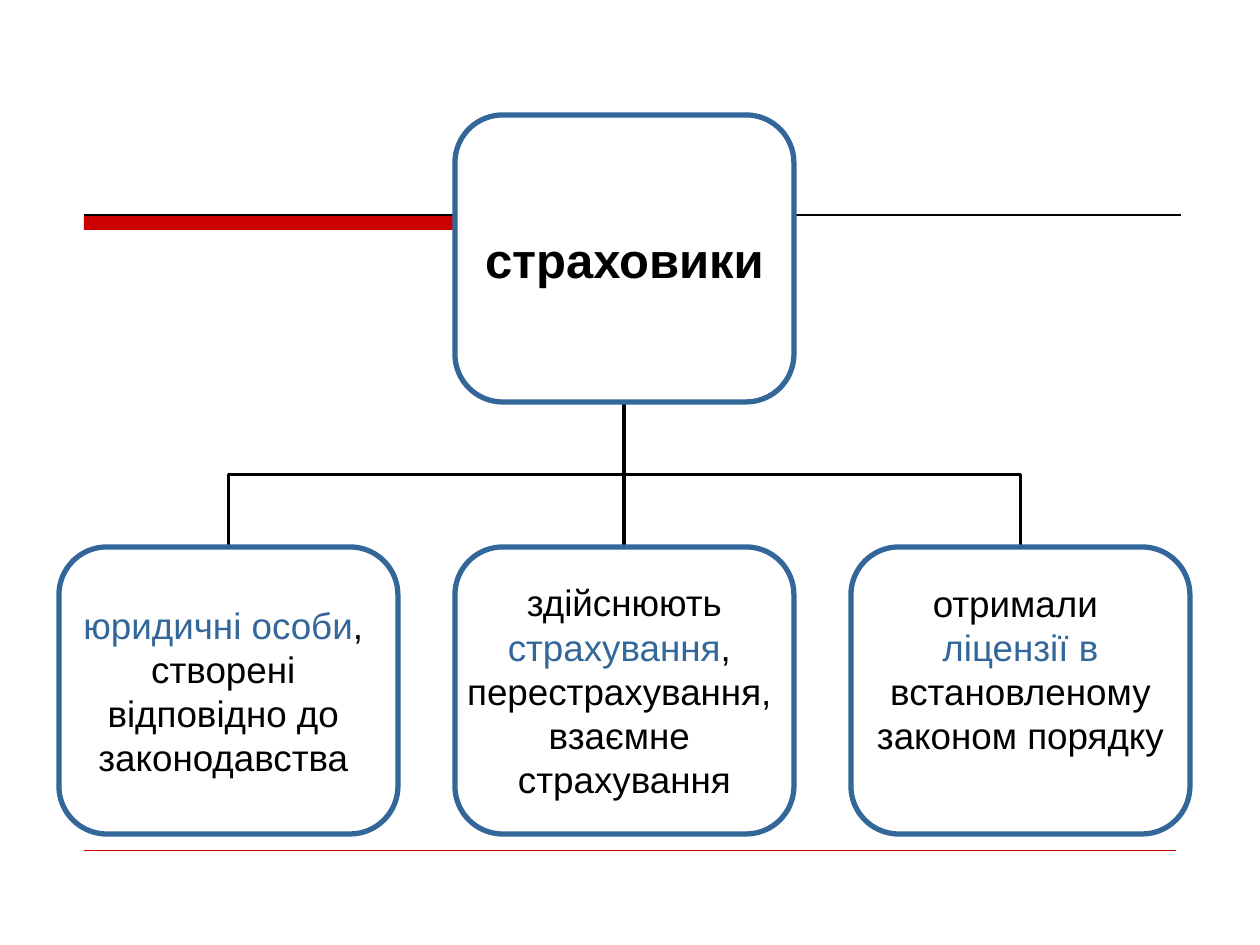
from lxml import etree
from pptx import Presentation, util as u
from pptx.dml.color import RGBColor
from pptx.enum import shapes, text
from pptx.oxml.ns import qn

BLACK, WHITE, BLUE, RED = "000000", "FFFFFF", "336699", "CC0000"
BOX_WIDTH, BOX_HEIGHT, BOX_STEP = 339, 287, 396
LINE_HEIGHT = 44

PARENT = [[("страховики", BLACK)]]
CHILDREN = [
    [
        [("юридичні особи", BLUE), (", ", BLACK)],
        [("створені ", BLACK)],
        [("відповідно до ", BLACK)],
        [("законодавства ", BLACK)],
    ],
    [
        [("здійснюють", BLACK)],
        [("страхування", BLUE), (", ", BLACK)],
        [("перестрахування, ", BLACK)],
        [("взаємне ", BLACK)],
        [("страхування", BLACK)],
    ],
    [
        [("отримали ", BLACK)],
        [("ліцензії в", BLUE)],
        [(" встановленому ", BLACK)],
        [("законом порядку", BLACK)],
    ],
]


def px(length):
    return u.Emu(round(length * 914400 / 126))


def color(value):
    return RGBColor.from_string(value)


def add_line(page, kind, start, end, value, width):
    line = page.shapes.add_connector(kind, *map(px, (*start, *end)))
    line.line.color.rgb = color(value)
    line.line.width = u.Pt(width)
    etree.SubElement(line.element.spPr, qn("a:effectLst"))
    return line


def add_rules(page, left, top, width, height):
    bar = page.shapes.add_shape(
        shapes.MSO_SHAPE.RECTANGLE, px(left), px(top), px(641), px(15))
    bar.shadow.inherit = False
    bar.fill.solid()
    bar.fill.fore_color.rgb = color(RED)
    bar.line.fill.background()
    straight = shapes.MSO_CONNECTOR.STRAIGHT
    add_line(page, straight, (left, top), (left + width, top), BLACK, 0.75)
    bottom = top + height
    add_line(page, straight, (left, bottom), (left + width - 5, bottom), RED, 0.25)


def add_branch(page, child, parent):
    middle_x = (child[0] + parent[0]) / 2
    middle_y = (child[1] + parent[1]) / 2
    half_rise = (child[1] - parent[1]) / 2
    half_run = (child[0] - parent[0]) / 2
    branch = add_line(
        page, shapes.MSO_CONNECTOR.ELBOW,
        (middle_x - half_rise, middle_y + half_run),
        (middle_x + half_rise, middle_y - half_run), BLACK, 2.25)
    branch.element.spPr.find(qn("a:xfrm")).set("rot", str(270 * 60000))


def add_box(page, left, top, lines, size, bold=False, bottom_inset=0):
    box = page.shapes.add_shape(
        shapes.MSO_SHAPE.ROUNDED_RECTANGLE,
        px(left), px(top), px(BOX_WIDTH), px(BOX_HEIGHT))
    box.shadow.inherit = False
    box.fill.solid()
    box.fill.fore_color.rgb = color(WHITE)
    box.line.color.rgb = color(BLUE)
    box.line.width = u.Pt(3)
    frame = box.text_frame
    frame.word_wrap = False
    frame.vertical_anchor = text.MSO_ANCHOR.MIDDLE
    frame.margin_left = frame.margin_right = frame.margin_top = 0
    frame.margin_bottom = px(bottom_inset)
    for index, parts in enumerate(lines):
        para = frame.add_paragraph() if index else frame.paragraphs[0]
        para.alignment = text.PP_ALIGN.CENTER
        for words, value in parts:
            span = para.add_run()
            span.text = words
            span.font.name = "Arial"
            span.font.size = u.Pt(size)
            span.font.bold = bold
            span.font.color.rgb = color(value)


def add_chart_of_insurers(page, left, top, child_offset):
    parent_left = left + BOX_STEP
    parent_foot = (parent_left + BOX_WIDTH / 2, top + BOX_HEIGHT)
    child_top = top + child_offset
    child_lefts = [left + BOX_STEP * index for index in range(len(CHILDREN))]
    for child_left in reversed(child_lefts):
        add_branch(page, (child_left + BOX_WIDTH / 2, child_top), parent_foot)
    add_box(page, parent_left, top, PARENT, 28, bold=True)
    for child_left, lines, inset in zip(child_lefts, CHILDREN, (0, 0, LINE_HEIGHT)):
        add_box(page, child_left, child_top, lines, 21, bottom_inset=inset)


def main():
    deck = Presentation()
    deck.slide_width, deck.slide_height = px(1260), px(945)
    page = deck.slides.add_slide(deck.slide_layouts[6])
    add_rules(page, 84, 215, 1097, 635)
    add_chart_of_insurers(page, 59, 115, 432)
    deck.save("out.pptx")


if __name__ == "__main__":
    main()
